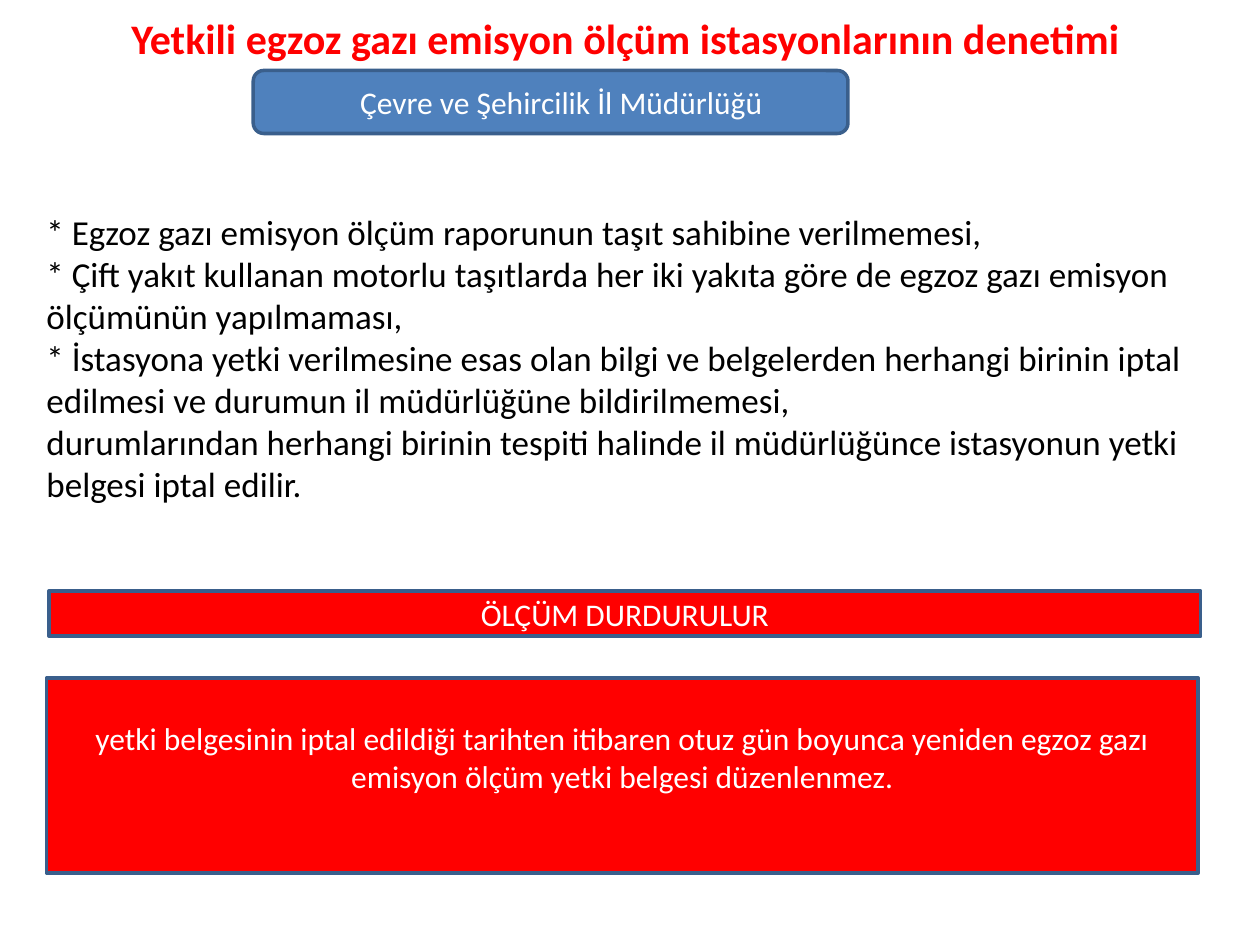
from dataclasses import dataclass
from typing import Optional

from pptx import Presentation
from pptx.dml.color import RGBColor
from pptx.enum import shapes as sh, text as tx
from pptx.util import Inches, Pt

HUES = {"red": "FF0000", "blue": "4F81BD", "edge": "3A5F8C",
        "white": "FFFFFF", "black": "000000"}
RECT = sh.MSO_SHAPE.RECTANGLE
ROUND = sh.MSO_SHAPE.ROUNDED_RECTANGLE
MID = tx.PP_ALIGN.CENTER


@dataclass
class Block:
    left: float
    top: float
    width: float
    height: float
    lines: list[str]
    size: int = 18
    hue: str = "white"
    fill: str = "red"
    kind: Optional[int] = RECT  # None makes a plain text box
    align: Optional[int] = MID
    bold: bool = False
    inset: float = 0.1  # left margin
    base: float = 0.05  # bottom margin


def tint(name: str) -> RGBColor:
    return RGBColor.from_string(HUES[name])


def draw(slide, block: Block) -> None:
    area = [Inches(n) for n in (block.left, block.top, block.width, block.height)]
    if block.kind is None:
        shape = slide.shapes.add_textbox(*area)
    else:
        shape = slide.shapes.add_shape(block.kind, *area)
        shape.shadow.inherit = False
        shape.fill.solid()
        shape.fill.fore_color.rgb = tint(block.fill)
        shape.line.color.rgb = tint("edge")
        shape.line.width = Pt(2)
        shape.text_frame.vertical_anchor = tx.MSO_ANCHOR.MIDDLE
    frame = shape.text_frame
    frame.word_wrap = True
    frame.margin_left = Inches(block.inset)
    frame.margin_bottom = Inches(block.base)
    frame.text = "\n".join(block.lines)
    for para in frame.paragraphs:
        para.alignment = block.align
        for run in para.runs:
            run.font.name = "Calibri"
            run.font.size = Pt(block.size)
            run.font.bold = block.bold
            run.font.color.rgb = tint(block.hue)


BLOCKS = [
    # Title
    Block(0.28, 0.05, 9.37, 0.5,
          ["Yetkili egzoz gazı emisyon ölçüm istasyonlarının denetimi"],
          size=24, hue="red", kind=None, bold=True),
    # Authority
    Block(2.01, 0.56, 4.72, 0.5, ["Çevre ve Şehircilik İl Müdürlüğü"],
          fill="blue", kind=ROUND, inset=0.27),
    # Violations
    Block(0.27, 1.62, 9.21, 2.46, [
        "* Egzoz gazı emisyon ölçüm raporunun taşıt sahibine verilmemesi,",
        "* Çift yakıt kullanan motorlu taşıtlarda her iki yakıta göre de "
        "egzoz gazı emisyon ölçümünün yapılmaması,",
        "* İstasyona yetki verilmesine esas olan bilgi ve belgelerden herhangi "
        "birinin iptal edilmesi ve durumun il müdürlüğüne bildirilmemesi,",
        "durumlarından herhangi birinin tespiti halinde il müdürlüğünce "
        "istasyonun yetki belgesi iptal edilir.",
    ], size=20, hue="black", kind=None, align=tx.PP_ALIGN.LEFT),
    # Sanctions
    Block(0.39, 4.69, 9.14, 0.36, ["ÖLÇÜM DURDURULUR"]),
    Block(0.37, 5.38, 9.14, 1.55, [
        "yetki belgesinin iptal edildiği tarihten itibaren otuz gün boyunca "
        "yeniden egzoz gazı emisyon ölçüm yetki belgesi düzenlenmez.",
    ], base=0.35),
]


def main() -> None:
    deck = Presentation()
    deck.slide_width, deck.slide_height = Inches(10), Inches(7.5)
    slide = deck.slides.add_slide(deck.slide_layouts[6])
    for block in BLOCKS:
        draw(slide, block)
    deck.save("out.pptx")


if __name__ == "__main__":
    main()
